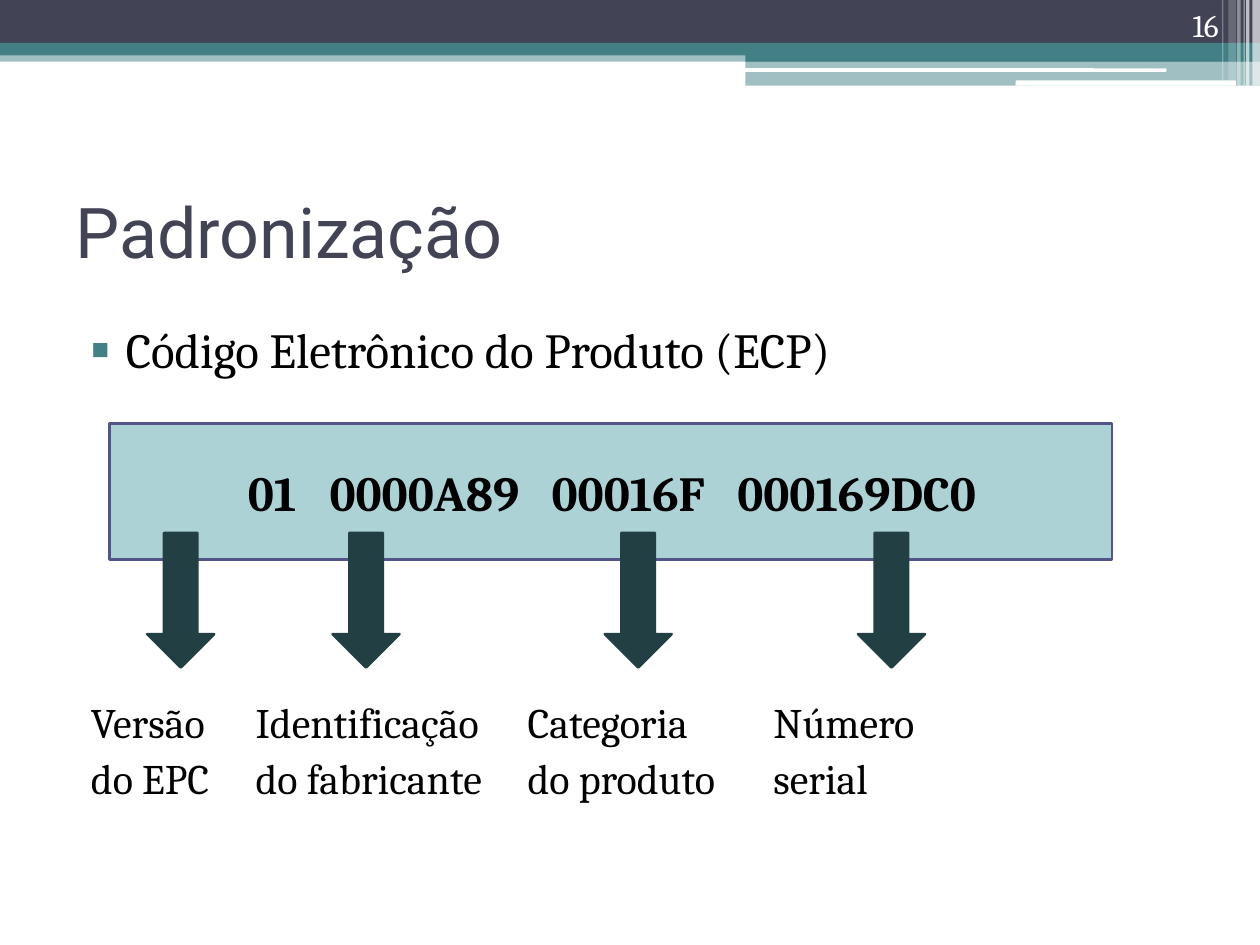
"""Build the slide on the Electronic Product Code standard."""
from lxml import etree
from pptx import Presentation
from pptx.dml.color import RGBColor
from pptx.enum.shapes import MSO_SHAPE
from pptx.enum.text import MSO_ANCHOR, PP_ALIGN
from pptx.oxml.ns import qn
from pptx.util import Pt

RECT, ROUND, DOWN = MSO_SHAPE.RECTANGLE, MSO_SHAPE.ROUNDED_RECTANGLE, MSO_SHAPE.DOWN_ARROW
TOP, MIDDLE, BOTTOM = MSO_ANCHOR.TOP, MSO_ANCHOR.MIDDLE, MSO_ANCHOR.BOTTOM
LEFT, CENTER, RIGHT = PP_ALIGN.LEFT, PP_ALIGN.CENTER, PP_ALIGN.RIGHT

COLORS = {
    "navy": "424456", "teal": "438086", "white": "FFFFFF", "black": "000000",
    "panel": "ADD2D6", "edge": "53548A", "arrow": "224043",
}
TITLE = "Padronização"
POINT = "Código Eletrônico do Produto (ECP)"
NUMBER = "16"

# code, code left, code width, arrow left, label lines, label left, label width
FIELDS = [
    ("01", 141.5, 28, 84.2, ["Versão", "do EPC"], 52, 80),
    ("0000A89", 188, 109, 190.1, ["Identificação", "do fabricante"], 146, 142),
    ("00016F", 315, 88, 345.6, ["Categoria", "do produto"], 301.5, 120),
    ("000169DC0", 421, 137, 490.3, ["Número", "serial"], 442, 94),
]
# kind, box, color, opacity
BANDS = [
    (RECT, (0, 28.8, 720, 6.5), "teal", 50),
    (RECT, (0, 0, 720, 24.5), "navy", 100),
    (RECT, (0, 24.5, 720, 7.2), "teal", 100),
    (RECT, (426, 28, 294, 7.2), "teal", 100),
    (RECT, (426, 35, 294, 14), "teal", 50),
    (ROUND, (425.5, 39, 241, 2), "white", 100),
    (ROUND, (580.3, 46, 126, 3), "white", 100),
]
# left, width, height, opacity
STRIPES = [
    (715.7, 4.3, 49, 65), (712, 2, 49, 65), (710.6, 0.7, 49, 60),
    (707, 2, 49, 40), (702, 4.3, 46, 20), (698.4, 0.7, 46, 30),
]


def color(name):
    return RGBColor.from_string(COLORS[name])


def draw(slide, kind, box, fill, opacity=100, line=None):
    shape = slide.shapes.add_shape(kind, *map(Pt, box))
    shape.shadow.inherit = False
    shape.fill.solid()
    shape.fill.fore_color.rgb = color(fill)
    if opacity < 100:
        tone = shape.fill._xPr.find(".//" + qn("a:srgbClr"))
        etree.SubElement(tone, qn("a:alpha"), val=str(opacity * 1000))
    if line:
        shape.line.color.rgb = color(line)
        shape.line.width = Pt(1.5)
    else:
        shape.line.fill.background()
    return shape


def write(shape, lines, size, font="Cambria", ink="black", bold=False,
          align=LEFT, anchor=TOP, inset=0, gap=0, wrap=True):
    frame = shape.text_frame
    frame.word_wrap = wrap
    frame.vertical_anchor = anchor
    frame.margin_left = frame.margin_right = Pt(inset)
    frame.margin_top = frame.margin_bottom = Pt(inset / 2)
    for i, line in enumerate(lines):
        para = frame.add_paragraph() if i else frame.paragraphs[0]
        para.alignment = align
        para.space_before = Pt(gap if i else 0)
        run = para.add_run()
        run.text = line
        run.font.size, run.font.name, run.font.bold = Pt(size), font, bold
        run.font.color.rgb = color(ink)
    return frame


def bullet(para, mark, tone):
    props = para._p.get_or_add_pPr()
    props.set("marL", str(Pt(28.8)))
    props.set("indent", str(Pt(-20)))
    paint = etree.SubElement(props, qn("a:buClr"))
    etree.SubElement(paint, qn("a:srgbClr"), val=COLORS[tone])
    etree.SubElement(props, qn("a:buFont"), typeface="Cambria")
    etree.SubElement(props, qn("a:buChar"), char=mark)


def place(slide, *box):
    return slide.shapes.add_textbox(*map(Pt, box))


def main():
    deck = Presentation()
    deck.slide_width, deck.slide_height = Pt(720), Pt(540)
    slide = deck.slides.add_slide(deck.slide_layouts[5])

    for kind, box, fill, opacity in BANDS:
        draw(slide, kind, box, fill, opacity)
    for left, width, height, opacity in STRIPES:
        draw(slide, RECT, (left, 0, width, height), "white", opacity)

    title = slide.shapes.title
    title.left, title.top, title.width, title.height = map(Pt, (36, 90, 648, 84))
    write(title, [TITLE], 40, font="Roboto", ink="navy", anchor=MIDDLE, inset=7.2)

    body = write(place(slide, 36, 179, 648, 45), [POINT], 28, inset=7.2)
    bullet(body.paragraphs[0], "▪", "teal")

    draw(slide, RECT, (62.6, 242, 573, 77.8), "panel", line="edge")
    for code, left, width, tip, label, start, span in FIELDS:
        write(place(slide, left, 242, width, 77.8), [code], 28, bold=True,
              align=CENTER, anchor=MIDDLE, wrap=False)
        draw(slide, DOWN, (tip, 304.5, 38.2, 77), "arrow", line="arrow")
        write(place(slide, start, 398, span, 64), label, 24, gap=3, wrap=False)

    write(place(slide, 643.7, 0, 59.8, 28.8), [NUMBER], 18, ink="white",
          align=RIGHT, anchor=BOTTOM, inset=7.2)
    deck.save("out.pptx")


if __name__ == "__main__":
    main()
